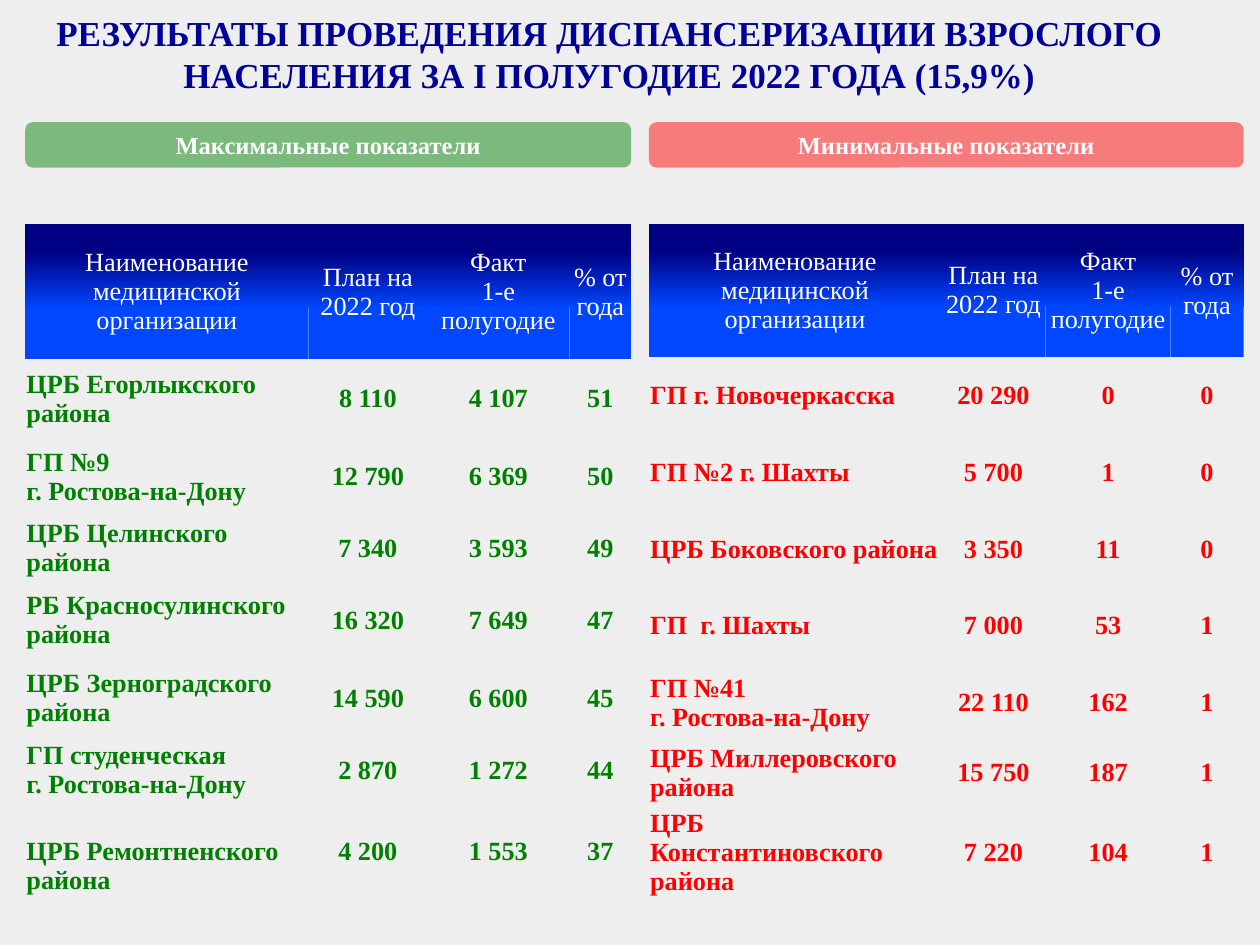
from dataclasses import dataclass

from lxml import etree
from pptx import Presentation
from pptx.dml.color import RGBColor
from pptx.enum.shapes import MSO_SHAPE
from pptx.enum.text import MSO_ANCHOR, MSO_AUTO_SIZE, PP_ALIGN
from pptx.oxml.ns import qn
from pptx.util import Inches, Pt

LEFT, CENTER = PP_ALIGN.LEFT, PP_ALIGN.CENTER
TOP, MIDDLE = MSO_ANCHOR.TOP, MSO_ANCHOR.MIDDLE
ROUNDED = MSO_SHAPE.ROUNDED_RECTANGLE
NO_FIT = MSO_AUTO_SIZE.NONE
TITLE_ONLY = 5
PLAIN_STYLE = "{2D5ABB26-0587-4C30-8999-92F81FD0307C}"


@dataclass(frozen=True)
class Theme:
    font: str = "Times New Roman"
    back: str = "EEEEEE"
    title: str = "000099"
    white: str = "FFFFFF"
    green: str = "008000"
    red: str = "FF0000"
    head_low: str = "0047FF"
    head_high: str = "000082"
    title_size: int = 20
    band_size: int = 14
    cell_size: int = 15
    band_alpha: int = 48


THEME = Theme()
TITLE = ("РЕЗУЛЬТАТЫ ПРОВЕДЕНИЯ ДИСПАНСЕРИЗАЦИИ ВЗРОСЛОГО "
         "НАСЕЛЕНИЯ ЗА I ПОЛУГОДИЕ 2022 ГОДА (15,9%)")
HEAD = ("Наименование медицинской организации", "План на 2022 год",
        "Факт\n1-е полугодие", "% от года")
BEST = [
    ("ЦРБ Егорлыкского района", "8 110", "4 107", "51"),
    ("ГП №9\nг. Ростова-на-Дону", "12 790", "6 369", "50"),
    ("ЦРБ Целинского района", "7 340", "3 593", "49"),
    ("РБ Красносулинского района", "16 320", "7 649", "47"),
    ("ЦРБ Зерноградского района", "14 590", "6 600", "45"),
    ("ГП студенческая\nг. Ростова-на-Дону", "2 870", "1 272", "44"),
    ("ЦРБ Ремонтненского района", "4 200", "1 553", "37"),
]
WORST = [
    ("ГП г. Новочеркасска", "20 290", "0", "0"),
    ("ГП №2 г. Шахты", "5 700", "1", "0"),
    ("ЦРБ Боковского района", "3 350", "11", "0"),
    ("ГП  г. Шахты", "7 000", "53", "1"),
    ("ГП №41\nг. Ростова-на-Дону", "22 110", "162", "1"),
    ("ЦРБ Миллеровского района", "15 750", "187", "1"),
    ("ЦРБ Константиновского района", "7 220", "104", "1"),
]


def rgb(code):
    return RGBColor.from_string(code)


def set_text(frame, text, size, color, bold=True, align=CENTER):
    frame.text = text
    for para in frame.paragraphs:
        para.alignment = align
        for run in para.runs:
            font = run.font
            font.name, font.size, font.bold = THEME.font, Pt(size), bold
            font.color.rgb = rgb(color)


def add_title(slide, left, top, width, height):
    title = slide.shapes.title
    title.left, title.top = Inches(left), Inches(top)
    title.width, title.height = Inches(width), Inches(height)
    frame = title.text_frame
    frame.word_wrap, frame.auto_size = True, NO_FIT
    frame.vertical_anchor = TOP
    set_text(frame, TITLE, THEME.title_size, THEME.title)


def add_band(slide, text, color, left, top, width, height):
    band = slide.shapes.add_shape(ROUNDED, Inches(left), Inches(top),
                                  Inches(width), Inches(height))
    band.shadow.inherit = False
    band.line.fill.background()
    band.fill.solid()
    band.fill.fore_color.rgb = rgb(color)
    tint = next(band.element.spPr.iter(qn("a:srgbClr")))
    etree.SubElement(tint, qn("a:alpha"), val=str(THEME.band_alpha * 1000))
    band.text_frame.vertical_anchor = MIDDLE
    set_text(band.text_frame, text, THEME.band_size, THEME.white)


def shade_head(cell):
    cell.fill.gradient()
    cell.fill.gradient_angle = 90
    marks = ((0.37, THEME.head_low), (0.8, THEME.head_high))
    for stop, (place, color) in zip(cell.fill.gradient_stops, marks):
        stop.position = place
        stop.color.rgb = rgb(color)


def add_grid(slide, data, color, left, top, cols, rows):
    """Add a table with a shaded heading row and return it."""
    grid = slide.shapes.add_table(
        len(rows), len(cols), Inches(left), Inches(top),
        Inches(sum(cols)), Inches(sum(rows)))
    next(grid.element.iter(qn("a:tableStyleId"))).text = PLAIN_STYLE
    table = grid.table
    table.first_row = table.horz_banding = False
    for col, width in zip(table.columns, cols):
        col.width = Inches(width)
    for row, height in zip(table.rows, rows):
        row.height = Inches(height)
    for r, line in enumerate([HEAD] + data):
        for c, text in enumerate(line):
            cell = table.cell(r, c)
            cell.vertical_anchor = MIDDLE
            edge = 0 if r == 0 and c < 3 else 0.01
            cell.margin_left = cell.margin_right = Inches(edge)
            cell.margin_top, cell.margin_bottom = Inches(edge), 0
            if r == 0:
                shade_head(cell)
                set_text(cell.text_frame, text, THEME.cell_size,
                         THEME.white, bold=False)
            else:
                cell.fill.background()
                set_text(cell.text_frame, text, THEME.cell_size, color,
                         align=CENTER if c else LEFT)
    return table


def add_panel(slide, label, data, color, left, top, cols, rows):
    """Add a coloured label with its table below."""
    add_band(slide, label, color, left, top, sum(cols), 0.36)
    return add_grid(slide, data, color, left, top + 0.81, cols, rows)


def main():
    deck = Presentation()
    deck.slide_width, deck.slide_height = Inches(10), Inches(7.5)
    slide = deck.slides.add_slide(deck.slide_layouts[TITLE_ONLY])
    slide.background.fill.solid()
    slide.background.fill.fore_color.rgb = rgb(THEME.back)
    add_title(slide, 0, 0.04, 9.67, 1.11)
    add_panel(slide, "Минимальные показатели", WORST, THEME.red, 5.15, 0.97,
              (2.32, 0.83, 0.99, 0.58), [1.05] + [0.61] * 5 + [0.5, 0.76])
    best = add_panel(slide, "Максимальные показатели", BEST, THEME.green,
                     0.2, 0.97, (2.25, 0.94, 1.13, 0.49),
                     [1.07, 0.62, 0.62, 0.52, 0.62, 0.62, 0.52, 0.77])
    best.cell(len(BEST), 0).margin_top = Inches(0.24)
    deck.save("out.pptx")


if __name__ == "__main__":
    main()
